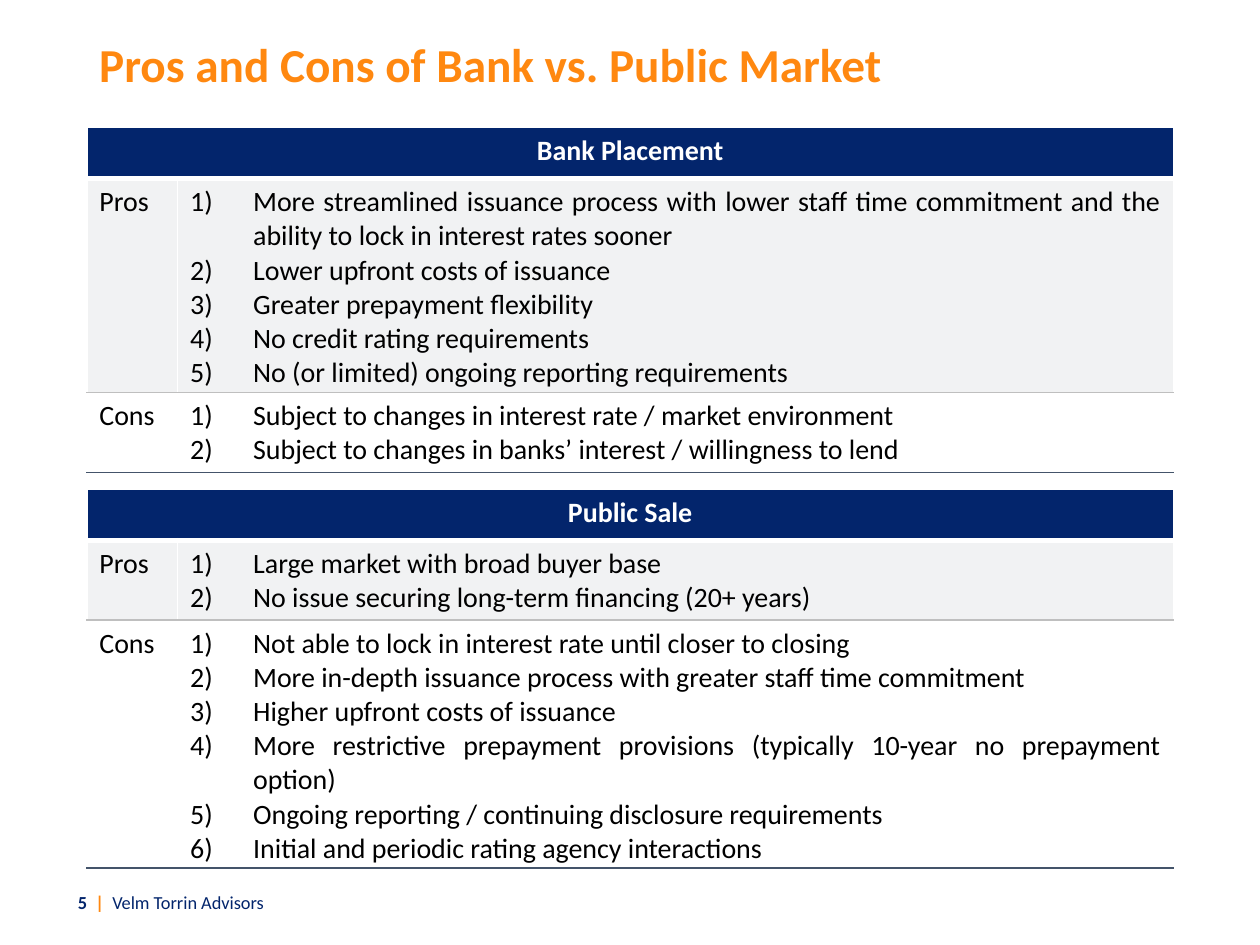
from lxml.etree import SubElement
from pptx import Presentation
from pptx.dml.color import RGBColor
from pptx.enum.text import MSO_ANCHOR, PP_ALIGN
from pptx.oxml import parse_xml
from pptx.oxml.ns import nsdecls, qn
from pptx.util import Cm, Pt

NAVY, ORANGE, WHITE, BLACK = "03256C", "FF8810", "FFFFFF", "000000"
PALE, GRAY, SLATE = "F1F2F3", "BFBFBF", "44546A"

BANK = {
    "Pros": [
        "More streamlined issuance process with lower staff time commitment "
        "and the ability to lock in interest rates sooner",
        "Lower upfront costs of issuance",
        "Greater prepayment flexibility",
        "No credit rating requirements",
        "No (or limited) ongoing reporting requirements",
    ],
    "Cons": [
        "Subject to changes in interest rate / market environment",
        "Subject to changes in banks’ interest / willingness to lend",
    ],
}
PUBLIC = {
    "Pros": [
        "Large market with broad buyer base",
        "No issue securing long-term financing (20+ years)",
    ],
    "Cons": [
        "Not able to lock in interest rate until closer to closing",
        "More in-depth issuance process with greater staff time commitment",
        "Higher upfront costs of issuance",
        "More restrictive prepayment provisions (typically 10-year no prepayment option)",
        "Ongoing reporting / continuing disclosure requirements",
        "Initial and periodic rating agency interactions",
    ],
}


def paint(code):
    return RGBColor.from_string(code)


def write(para, text, size=16, color=BLACK, bold=False, align=PP_ALIGN.LEFT):
    para.alignment = align
    run = para.add_run()
    run.text = text
    font = run.font
    font.name = "Calibri"
    font.size = Pt(size)
    font.bold = bold
    font.color.rgb = paint(color)


def add_box(slide, left, top, width, height, anchor):
    frame = slide.shapes.add_textbox(Cm(left), Cm(top), Cm(width), Cm(height)).text_frame
    frame.word_wrap = True
    frame.vertical_anchor = anchor
    return frame.paragraphs[0]


def number(para):
    props = para._p.get_or_add_pPr()
    props.set("marL", str(Cm(1.27)))
    props.set("indent", str(-Cm(1.27)))
    SubElement(props, qn("a:buFont")).set("typeface", "+mj-lt")
    SubElement(props, qn("a:buAutoNum")).set("type", "arabicParenR")


def dress(cell, fill, top, base):
    if fill:
        cell.fill.solid()
        cell.fill.fore_color.rgb = paint(fill)
    else:
        cell.fill.background()
    sides = {"L": (WHITE, 1), "R": (WHITE, 1), "T": top, "B": base}
    for spot, (side, (color, width)) in enumerate(sides.items()):
        line = parse_xml(
            f'<a:ln{side} {nsdecls("a")} w="{Pt(width)}"><a:solidFill>'
            f'<a:srgbClr val="{color}"/></a:solidFill></a:ln{side}>'
        )
        cell._tc.get_or_add_tcPr().insert(spot, line)


def add_list(cell, items):
    frame = cell.text_frame
    for spot, item in enumerate(items):
        para = frame.add_paragraph() if spot else frame.paragraphs[0]
        number(para)
        write(para, item, align=PP_ALIGN.JUSTIFY)


def add_grid(slide, top, height, title, groups):
    shape = slide.shapes.add_table(3, 2, Cm(1.75), Cm(top), Cm(21.91), Cm(height))
    table = shape.table
    table.first_row = table.horz_banding = False
    for col, width in zip(table.columns, (1.83, 20.08)):
        col.width = Cm(width)
    for row in table.rows:
        row.height = Cm(1.03)
    looks = [
        (NAVY, (WHITE, 1), (WHITE, 3)),
        (PALE, (WHITE, 3), (GRAY, 1)),
        (None, (GRAY, 1), (SLATE, 1)),
    ]
    for row, look in zip(table.rows, looks):
        for cell in row.cells:
            dress(cell, *look)
    head = table.cell(0, 0)
    head.merge(table.cell(0, 1))
    write(head.text_frame.paragraphs[0], title, color=WHITE, bold=True, align=PP_ALIGN.CENTER)
    for row, (label, items) in enumerate(groups.items(), 1):
        write(table.cell(row, 0).text_frame.paragraphs[0], label)
        add_list(table.cell(row, 1), items)


def main():
    deck = Presentation()
    deck.slide_width, deck.slide_height = Cm(25.4), Cm(19.05)
    slide = deck.slides.add_slide(deck.slide_layouts[6])

    foot = add_box(slide, 1.32, 17.68, 10.46, 1.02, MSO_ANCHOR.MIDDLE)
    write(foot, "5  ", size=10.5, color=NAVY, bold=True)
    write(foot, "|  ", size=10.5, color=ORANGE, bold=True)
    write(foot, "Velm Torrin Advisors", size=10.5, color=NAVY)

    title = add_box(slide, 1.75, 0.71, 21.9, 2.29, MSO_ANCHOR.TOP)
    title.line_spacing = 0.9
    write(title, "Pros and Cons of Bank vs. Public Market", size=27, color=ORANGE, bold=True)

    add_grid(slide, 2.57, 6.96, "Bank Placement", BANK)
    add_grid(slide, 9.86, 7.65, "Public Sale", PUBLIC)
    deck.save("out.pptx")


if __name__ == "__main__":
    main()
